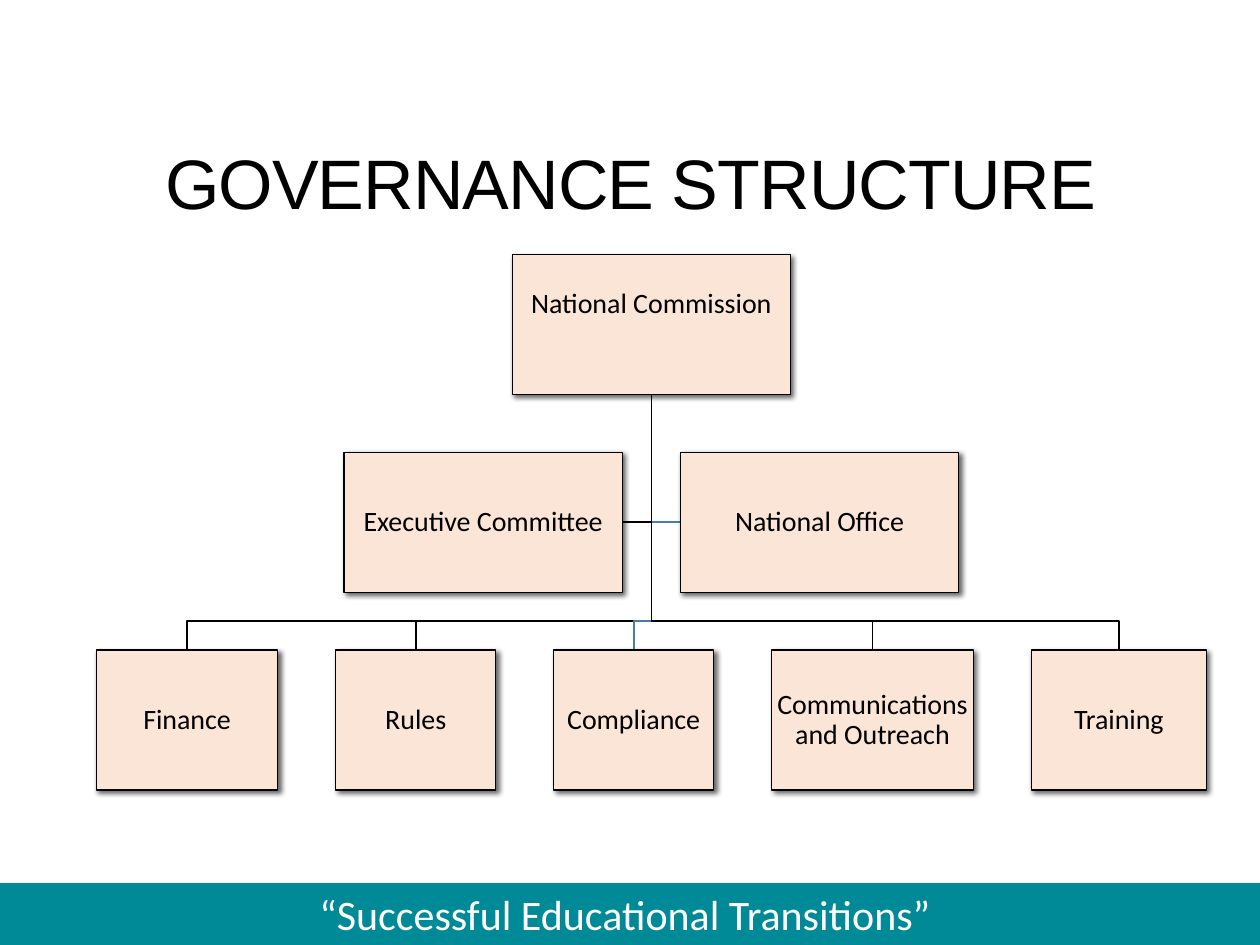
from lxml import etree
from pptx import Presentation
from pptx.dml.color import RGBColor
from pptx.enum.shapes import MSO_SHAPE
from pptx.enum.text import MSO_ANCHOR, PP_ALIGN
from pptx.oxml import parse_xml
from pptx.oxml.ns import nsdecls
from pptx.util import Inches, Pt

RECT = MSO_SHAPE.RECTANGLE
MIDDLE = MSO_ANCHOR.MIDDLE
TOP = MSO_ANCHOR.TOP
CENTER = PP_ALIGN.CENTER

# Content: rows of (label, box width)
TITLE = "GOVERNANCE STRUCTURE"
MOTTO = "“Successful Educational Transitions”"
ROWS = [
    [("National Commission", 2.21)],
    [("Executive Committee", 2.21), ("National Office", 2.21)],
    [("Finance", 1.44), ("Rules", 1.27), ("Compliance", 1.27),
     ("Communications and Outreach", 1.6), ("Training", 1.39)],
]
ACCENTED = {"National Office", "Compliance"}

# Look and grid, in inches
BLACK, WHITE, TEAL, PEACH, BLUE = "000000", "FFFFFF", "008996", "FBE5D6", "497CAB"
MID, TOP_Y, BOX_H, GAP = 5.17, 2.02, 1.11, 0.46
STEP = BOX_H + GAP
RAISE = 0.32  # extra bottom inset that lifts the top label
SHADOW = (
    f'<a:outerShdw {nsdecls("a")} blurRad="38100" dist="25400" dir="2700000" '
    'algn="tl" rotWithShape="0"><a:srgbClr val="000000">'
    '<a:alpha val="60000"/></a:srgbClr></a:outerShdw>'
)

prs = Presentation()
prs.slide_width, prs.slide_height = Inches(10), Inches(7.5)
slide = prs.slides.add_slide(prs.slide_layouts[6])


def tint(code):
    return RGBColor.from_string(code)


def write(shape, words, size, font, color, space=1.0, anchor=MIDDLE):
    frame = shape.text_frame
    frame.word_wrap = True
    frame.vertical_anchor = anchor
    para = frame.paragraphs[0]
    para.alignment = CENTER
    para.line_spacing = space
    run = para.add_run()
    run.text = words
    run.font.size = Pt(size)
    run.font.name = font
    run.font.color.rgb = tint(color)
    return run


def panel(place, fill):
    shape = slide.shapes.add_shape(RECT, *map(Inches, place))
    shape.shadow.inherit = False
    shape.fill.solid()
    shape.fill.fore_color.rgb = tint(fill)
    return shape


def label(place, *style, **more):
    return write(slide.shapes.add_textbox(*map(Inches, place)), *style, **more)


def link(points, color):
    start, *rest = [(Inches(x), Inches(y)) for x, y in points]
    path = slide.shapes.build_freeform(*start)
    path.add_line_segments(rest, close=False)
    shape = path.convert_to_shape()
    shape.shadow.inherit = False
    shape.fill.background()
    shape.line.color.rgb = tint(color)
    shape.line.width = Pt(1)


def box(words, place, lift):
    shape = panel(place, PEACH)
    shape.line.color.rgb = tint(BLACK)
    shape.line.width = Pt(0.75)
    effects = shape._element.spPr.find("{*}effectLst")
    etree.ElementBase.append(effects, parse_xml(SHADOW))
    frame = shape.text_frame
    frame.margin_left = frame.margin_right = frame.margin_top = Inches(0.01)
    frame.margin_bottom = Inches(0.01 + lift)
    write(shape, words, 16, "Calibri", BLACK, space=0.9)


# Footer band and title
panel((0, 7.01, 10.03, 0.5), TEAL).line.fill.background()
label((1.75, 7, 6.42, 0.5), MOTTO, 24, "Calibri", WHITE, anchor=TOP)
head = label((0.88, 1.08, 8.25, 0.83), TITLE, 40, "Arial", BLACK, space=0.85)
head._r.get_or_add_rPr().set("spc", "-50")

# Centre each row of boxes on the trunk
spots = []
for level, row in enumerate(ROWS):
    left = MID - (sum(w for _, w in row) + GAP * (len(row) - 1)) / 2
    for words, wide in row:
        spots.append((level, words, (left, TOP_Y + level * STEP, wide, BOX_H)))
        left += wide + GAP

# Links run from the top box, behind all boxes
root = (MID, TOP_Y + BOX_H)
for level, words, (x, y, w, h) in sorted(spots[1:], key=lambda s: s[0]):
    if level == 1:
        side = y + h / 2
        turns = [(MID, side), (x + w if x < MID else x, side)]
    else:
        bus, stem = y - GAP / 2, x + w / 2
        turns = [(MID, bus), (stem, bus), (stem, y)]
    link([root, *turns], BLUE if words in ACCENTED else BLACK)

for level, words, place in spots:
    box(words, place, RAISE if level == 0 else 0)

prs.save("out.pptx")
